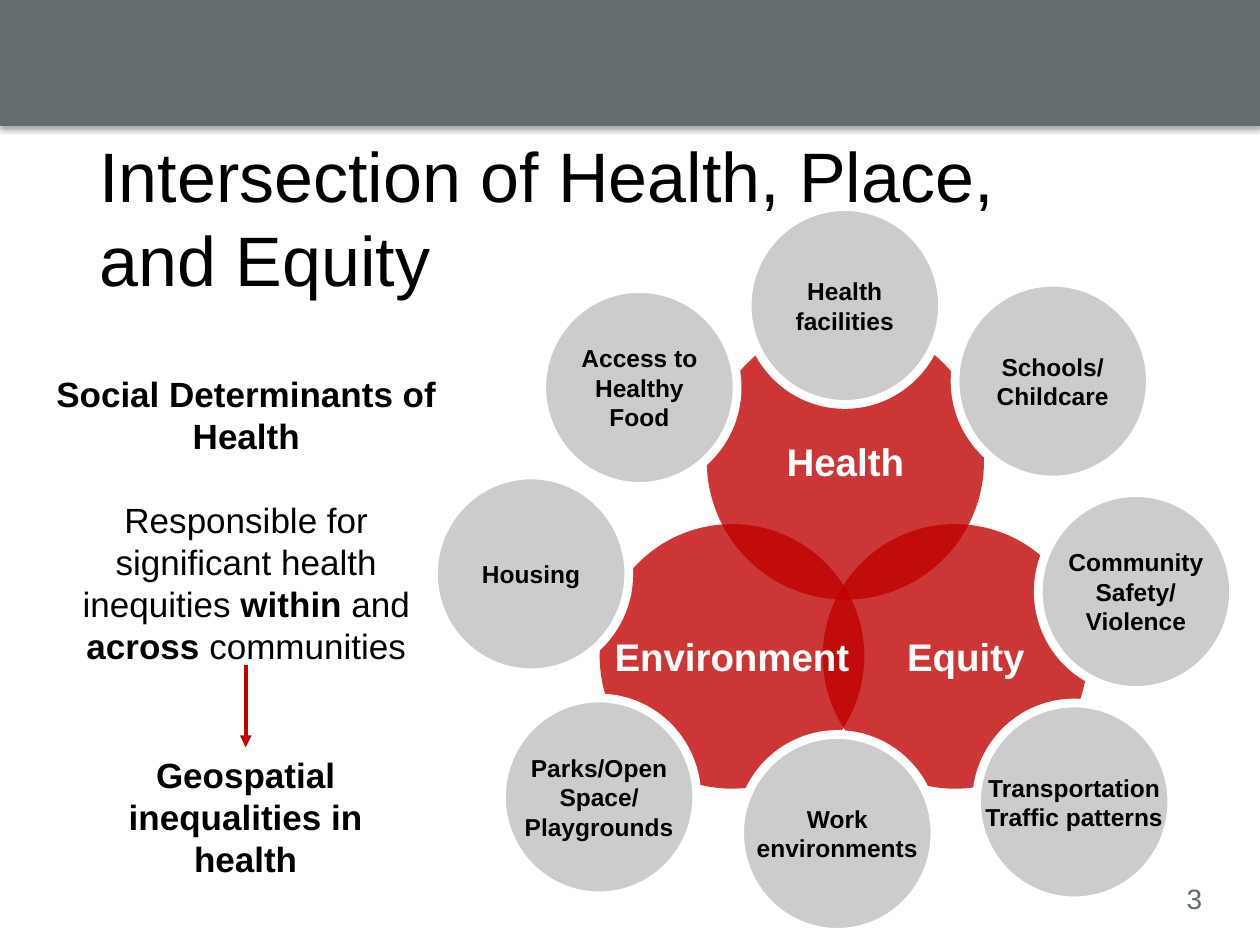
from lxml.etree import SubElement as Sub
from pptx import Presentation
from pptx.dml.color import RGBColor
from pptx.enum.shapes import MSO_CONNECTOR as Link, MSO_SHAPE as Kind
from pptx.enum.text import MSO_ANCHOR as Anchor, MSO_AUTO_SIZE as Fit, PP_ALIGN as Align
from pptx.oxml.ns import qn
from pptx.util import Inches, Pt

BLACK = RGBColor(0x00, 0x00, 0x00)
WHITE = RGBColor(0xFF, 0xFF, 0xFF)
SLATE = RGBColor(0x63, 0x6D, 0x6E)
GREY = RGBColor(0xCC, 0xCC, 0xCC)
RED = RGBColor(0xC0, 0x00, 0x00)

LOBES = [
    ("Equity", 3.09, 2.52, 2.1, 0.17),
    ("Environment", 1.32, 2.52, 2.1, 0),
    ("Health", 2.17, 0.92, 2.2, 0),
]
FACTORS = [
    ("Access to\nHealthy\nFood", 0.86, 0.65),
    ("Schools/\nChildcare", 4.14, 0.6),
    ("Health\vfacilities", 2.49, 0),
    ("Community\nSafety/\nViolence", 4.8, 2.27),
    ("Transportation\vTraffic patterns", 4.31, 3.94),
    ("Work\nenvironments", 2.43, 4.19),
    ("Housing", 0, 2.13),
    ("Parks/Open\vSpace/\nPlaygrounds", 0.54, 3.9),
]


def style(frame, size, color, bold=False, align=Align.CENTER):
    """Format every run of a text frame alike."""
    for para in frame.paragraphs:
        para.alignment = align
        for run in para.runs:
            font = run.font
            font.name, font.size, font.bold = "Arial", Pt(size), bold
            font.color.rgb = color


def add_text(slide, box, text, size=20, color=BLACK, bold=True, align=Align.CENTER, wrap=True):
    """Add a text box and return it."""
    shape = slide.shapes.add_textbox(*map(Inches, box))
    frame = shape.text_frame
    frame.word_wrap = wrap
    frame.text = text
    style(frame, size, color, bold, align)
    return shape


def add_disc(slide, box, text, fill, size, color):
    """Add a filled ellipse with a centred bold label."""
    disc = slide.shapes.add_shape(Kind.OVAL, *map(Inches, box))
    disc.shadow.inherit = False
    disc.fill.solid()
    disc.fill.fore_color.rgb = fill
    frame = disc.text_frame
    frame.word_wrap = False
    frame.vertical_anchor = Anchor.MIDDLE
    frame.text = text
    style(frame, size, color, True)
    return disc


def add_band(slide, box):
    """Add the header band with its soft shadow."""
    band = slide.shapes.add_shape(Kind.RECTANGLE, *map(Inches, box))
    band.shadow.inherit = False
    band.fill.solid()
    band.fill.fore_color.rgb = SLATE
    band.line.fill.background()
    effect = band.element.spPr.find(qn("a:effectLst"))
    shade = Sub(effect, qn("a:outerShdw"), blurRad=str(Pt(3.1)), dist=str(Pt(1.8)),
                dir="5400000", rotWithShape="0")
    tint = Sub(shade, qn("a:srgbClr"), val="000000")
    Sub(tint, qn("a:alpha"), val="35000")


def add_title(slide, box, text):
    """Place and format the title."""
    title = slide.shapes.title
    title.left, title.top, title.width, title.height = map(Inches, box)
    frame = title.text_frame
    frame.text = text
    frame.auto_size = Fit.NONE
    frame.vertical_anchor = Anchor.TOP
    style(frame, 40, BLACK, align=Align.LEFT)


def add_venn(slide, left, top):
    """Draw three overlapping lobes ringed by eight factors."""
    for text, x, y, side, shift in LOBES:
        lobe = add_disc(slide, (left + x, top + y, side, side), text, RED, 22, WHITE)
        lobe.line.fill.background()
        lobe.text_frame.margin_left = Inches(0.1 + shift)
        tint = lobe.element.spPr.find(qn("a:solidFill"))[0]
        Sub(tint, qn("a:alpha"), val="79000")
    for text, x, y in FACTORS:
        disc = add_disc(slide, (left + x, top + y, 1.55, 1.57), text, GREY, 14, BLACK)
        disc.line.color.rgb = WHITE
        disc.line.width = Pt(5)


def add_arrow(slide, x, top, goal):
    """Draw an arrow down to the top of the goal shape."""
    arrow = slide.shapes.add_connector(
        Link.STRAIGHT, Inches(x), Inches(top), Inches(x), goal.top)
    arrow.end_connect(goal, 0)
    arrow.line.color.rgb = RED
    arrow.line.width = Pt(2.25)
    Sub(arrow.line._get_or_add_ln(), qn("a:tailEnd"), type="triangle")
    Sub(arrow.element.spPr, qn("a:effectLst"))


def add_claim(slide, left, top):
    """Add the column that leads from determinants to inequalities."""
    lead = add_text(slide, (left, top, 3.37, 2.12), "Social Determinants of Health")
    para = lead.text_frame.add_paragraph()
    parts = ["Responsible for significant health inequities ", "within", " and ",
             "across", " communities"]
    for part in parts:
        para.add_run().text = part
    style(lead.text_frame, 20, BLACK)
    para.space_before = Pt(24)
    lead.text_frame.paragraphs[0].runs[0].font.bold = True
    for run in para.runs[1::2]:
        run.font.bold = True
    goal = add_text(slide, (left + 0.36, top + 3.02, 2.64, 0.77),
                    "Geospatial inequalities in health")
    add_arrow(slide, left + 1.68, top + 2.37, goal)


def main():
    """Build and save the slide."""
    deck = Presentation()
    deck.slide_width, deck.slide_height = Inches(10), Inches(7.5)
    slide = deck.slides.add_slide(deck.slide_layouts[5])
    add_band(slide, (0, 0, 10, 1))
    add_text(slide, (9.32, 6.95, 0.48, 0.37), "3", 16, SLATE, False, Align.LEFT, False)
    add_title(slide, (0.69, 1, 8.62, 0.85), "Intersection of Health, Place,\vand Equity")
    add_venn(slide, 3.44, 1.64)
    add_claim(slide, 0.27, 2.91)
    deck.save("out.pptx")


if __name__ == "__main__":
    main()
